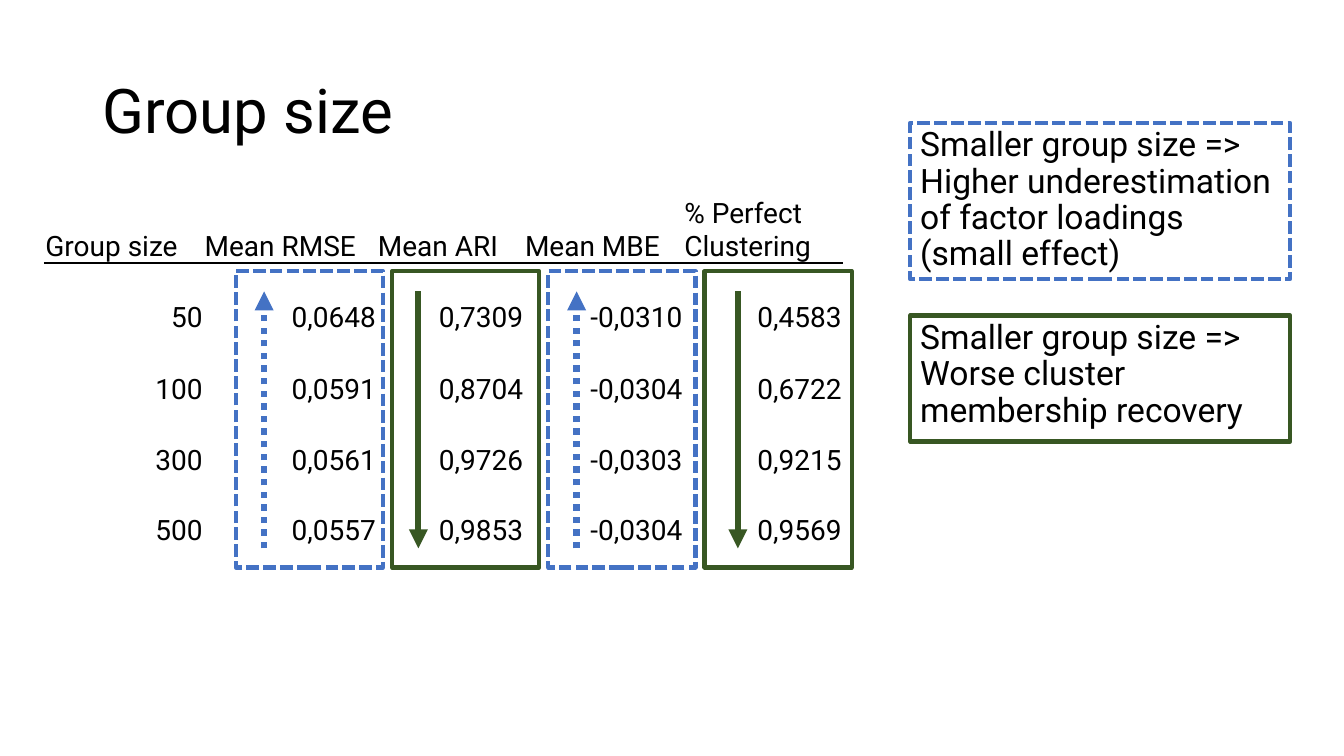
from dataclasses import dataclass

from pptx import Presentation
from pptx.dml.color import RGBColor
from pptx.enum.dml import MSO_LINE
from pptx.enum.shapes import MSO_CONNECTOR, MSO_SHAPE
from pptx.enum.text import MSO_ANCHOR, PP_ALIGN
from pptx.oxml.ns import qn
from pptx.util import Pt
from lxml.etree import SubElement


@dataclass(frozen=True)
class Theme:
    font: str = "Roboto"
    ink: str = "000000"
    blue: str = "4472C4"
    green: str = "385723"
    title: float = 44
    callout: float = 24
    table: float = 20
    frame_line: float = 3
    arrow_line: float = 4.5


THEME = Theme()

HEADERS = ["Group size", "Mean RMSE", "Mean ARI", "Mean MBE", "% Perfect Clustering"]
RESULTS = [
    ["50", "0,0648", "0,7309", "-0,0310", "0,4583"],
    ["100", "0,0591", "0,8704", "-0,0304", "0,6722"],
    ["300", "0,0561", "0,9726", "-0,0303", "0,9215"],
    ["500", "0,0557", "0,9853", "-0,0304", "0,9569"],
]
COLUMN_WIDTHS = [113.8, 123.8, 105.1, 113.8, 113.8]
ROW_HEIGHTS = [60.5, 51.1, 51.1, 51.1, 49.7]
TRENDS = [("up", 20.2), ("down", 18.7), ("up", 20.2), ("down", 23.8)]


def write_text(frame, text, size, align=PP_ALIGN.LEFT, anchor=MSO_ANCHOR.TOP,
               line_spacing=None, space_before=0):
    frame.word_wrap = True
    frame.vertical_anchor = anchor
    para = frame.paragraphs[0]
    para.alignment = align
    para.line_spacing = line_spacing
    para.space_before = Pt(space_before)
    span = para.add_run()
    span.text = text
    span.font.name = THEME.font
    span.font.size = Pt(size)
    span.font.color.rgb = RGBColor.from_string(THEME.ink)


def style_line(line, color, width, dash=None):
    line.color.rgb = RGBColor.from_string(color)
    line.width = Pt(width)
    if dash is not None:
        line.dash_style = dash


def add_frame(page, box, direction):
    frame = page.shapes.add_shape(MSO_SHAPE.RECTANGLE, *map(Pt, box))
    frame.shadow.inherit = False
    frame.fill.background()
    if direction == "up":
        style_line(frame.line, THEME.blue, THEME.frame_line, MSO_LINE.SQUARE_DOT)
    else:
        style_line(frame.line, THEME.green, THEME.frame_line)
    return frame


def add_arrow(page, x, top, bottom, direction):
    start, end = (bottom, top) if direction == "up" else (top, bottom)
    arrow = page.shapes.add_connector(
        MSO_CONNECTOR.STRAIGHT, Pt(x), Pt(start), Pt(x), Pt(end))
    if direction == "up":
        style_line(arrow.line, THEME.blue, THEME.arrow_line, MSO_LINE.ROUND_DOT)
    else:
        style_line(arrow.line, THEME.green, THEME.arrow_line)
    properties = arrow._element.spPr
    SubElement(properties.find(qn("a:ln")), qn("a:tailEnd"), type="triangle")
    SubElement(properties, qn("a:effectLst"))


def add_rule(cell, side):
    properties = cell._tc.get_or_add_tcPr()
    rule = SubElement(properties, qn(f"a:{side}"), w=str(Pt(1)))
    fill = SubElement(rule, qn("a:solidFill"))
    SubElement(fill, qn("a:srgbClr"), val=THEME.ink)
    properties.insert(0, rule)


def draw_title(page, box):
    title = page.shapes.add_textbox(*map(Pt, box))
    write_text(title.text_frame, "Group size", THEME.title,
               anchor=MSO_ANCHOR.MIDDLE, line_spacing=0.9)


def draw_table(page, left, top):
    rows = [HEADERS, *RESULTS]
    table = page.shapes.add_table(
        len(rows), len(HEADERS), Pt(left), Pt(top),
        Pt(sum(COLUMN_WIDTHS)), Pt(sum(ROW_HEIGHTS))).table
    table.first_row = table.horz_banding = False
    for column, width in zip(table.columns, COLUMN_WIDTHS):
        column.width = Pt(width)
    for row, height in zip(table.rows, ROW_HEIGHTS):
        row.height = Pt(height)
    for row_index, values in enumerate(rows):
        for column_index, value in enumerate(values):
            cell = table.cell(row_index, column_index)
            cell.margin_left = cell.margin_right = cell.margin_top = Pt(0.7)
            cell.margin_bottom = 0
            cell.vertical_anchor = MSO_ANCHOR.BOTTOM
            cell.fill.background()
            write_text(cell.text_frame, value, THEME.table,
                       align=PP_ALIGN.RIGHT if row_index else PP_ALIGN.LEFT,
                       anchor=None)
            if row_index < 2:
                add_rule(cell, "lnT" if row_index else "lnB")


def draw_trends(page, box, pitch):
    left, top, width, height = box
    for index, (direction, inset) in enumerate(TRENDS):
        frame_left = left + index * pitch
        add_frame(page, (frame_left, top, width, height), direction)
        add_arrow(page, frame_left + inset, top + 14.4, top + height - 13.7, direction)


def draw_callout(page, box, text, direction):
    callout = add_frame(page, box, direction)
    write_text(callout.text_frame, text, THEME.callout,
               line_spacing=0.9, space_before=5)


def main():
    deck = Presentation()
    deck.slide_width, deck.slide_height = Pt(960), Pt(540)
    page = deck.slides.add_slide(deck.slide_layouts[6])
    draw_title(page, (66.2, 28.8, 828, 104.4))
    draw_table(page, 31.7, 127.4)
    draw_trends(page, (168.5, 193.7, 105.1, 211.7), pitch=111.6)
    draw_callout(page, (650.2, 87.8, 271.4, 111.6),
                 "Smaller group size => Higher underestimation of factor loadings "
                 "(small effect)", "up")
    draw_callout(page, (650.2, 225.4, 271.4, 90),
                 "Smaller group size => Worse cluster membership recovery", "down")
    deck.save("out.pptx")


if __name__ == "__main__":
    main()
